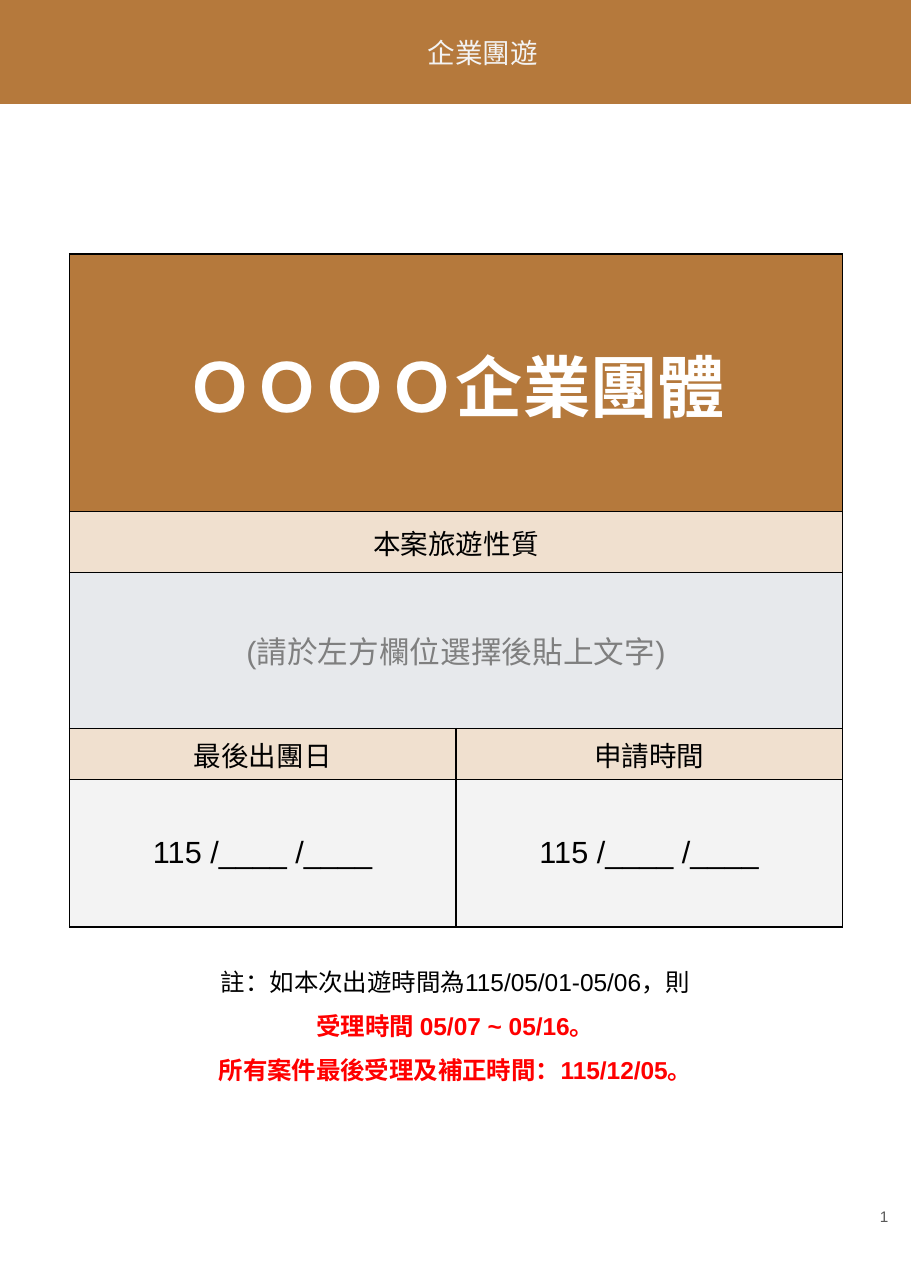
from lxml import etree
from pptx import Presentation
from pptx.dml.color import RGBColor
from pptx.enum import shapes, text
from pptx.oxml import ns
from pptx.util import Cm, Pt

BROWN, SAND, PALE = "B5793C", "F0E0CF", "F3F3F3"
BLACK, WHITE, RED = "000000", "FFFFFF", "FF0000"


def rgb(code):
    return RGBColor.from_string(code)


def style(para, size, color, bold=False, name="Arial", align=text.PP_ALIGN.CENTER):
    para.alignment = align
    font = para.font
    font.size, font.bold, font.name = Pt(size), bold, name
    font.color.rgb = rgb(color)


prs = Presentation()
prs.slide_width, prs.slide_height = Cm(21), Cm(29.7)
slide = prs.slides.add_slide(prs.slide_layouts[5])

# Header band, behind the title
band = slide.shapes.add_shape(shapes.MSO_SHAPE.RECTANGLE, 0, 0, Cm(21), Cm(2.4))
band.shadow.inherit = False
band.fill.solid()
band.fill.fore_color.rgb = rgb(BROWN)
band.line.fill.background()
title = slide.shapes.title
title._element.addprevious(band._element)

# Title
title.left, title.top, title.width, title.height = Cm(6), Cm(0.58), Cm(10.26), Cm(2.39)
frame = title.text_frame
frame.text = "企業團遊"
frame.vertical_anchor = text.MSO_ANCHOR.TOP
frame.margin_top = frame.margin_bottom = Cm(0.25)
style(frame.paragraphs[0], 18, PALE, name="Roboto")

# Case table: height, fill, size, colour, bold, texts (one text spans the row)
rows = [
    (5.94, BROWN, 44, WHITE, True, ["ＯＯＯＯ企業團體"]),
    (1.4, SAND, 18, BLACK, False, ["本案旅遊性質"]),
    (3.6, "E7E9EC", 20, "7F7F7F", False, ["(請於左方欄位選擇後貼上文字)"]),
    (1.16, SAND, 18, BLACK, False, ["最後出團日", "申請時間"]),
    (3.4, PALE, 20, BLACK, False, ["115 /____ /____"] * 2),
]
high = sum(row[0] for row in rows)
table = slide.shapes.add_table(len(rows), 2, Cm(1.6), Cm(5.86), Cm(17.82), Cm(high)).table
for r, (tall, fill, size, color, bold, words) in enumerate(rows):
    table.rows[r].height = Cm(tall)
    if len(words) == 1:
        table.cell(r, 0).merge(table.cell(r, 1))
    for c in range(2):
        cell = table.cell(r, c)
        props = cell._tc.get_or_add_tcPr()
        for side in ("a:lnL", "a:lnR", "a:lnT", "a:lnB"):
            line = etree.SubElement(props, ns.qn(side), w=str(Pt(1)))
            solid = etree.SubElement(line, ns.qn("a:solidFill"))
            etree.SubElement(solid, ns.qn("a:srgbClr"), val=BLACK)
        cell.fill.solid()
        cell.fill.fore_color.rgb = rgb(fill)
        cell.vertical_anchor = text.MSO_ANCHOR.MIDDLE
        if c < len(words):
            cell.text = words[c]
            style(cell.text_frame.paragraphs[0], size, color, bold)

# Notes on the deadlines
notes = [
    ("註：如本次出遊時間為115/05/01-05/06，則", BLACK, False),
    ("受理時間 05/07 ~ 05/16。", RED, True),
    ("所有案件最後受理及補正時間：115/12/05。", RED, True),
]
frame = slide.shapes.add_textbox(Cm(1.6), Cm(21.72), Cm(17.8), Cm(3.25)).text_frame
frame.word_wrap = True
frame.margin_top = frame.margin_bottom = Cm(0.25)
frame.text = "\n".join(note[0] for note in notes)
for para, (_, color, bold) in zip(frame.paragraphs, notes):
    style(para, 16, color, bold)
    para.line_spacing = 1.5

# Page number
frame = slide.shapes.add_textbox(Cm(19.46), Cm(26.92), Cm(1.27), Cm(2.26)).text_frame
frame.word_wrap = True
frame.vertical_anchor = text.MSO_ANCHOR.MIDDLE
frame.text = "1"
style(frame.paragraphs[0], 10, "595959", align=text.PP_ALIGN.RIGHT)

prs.save("out.pptx")
